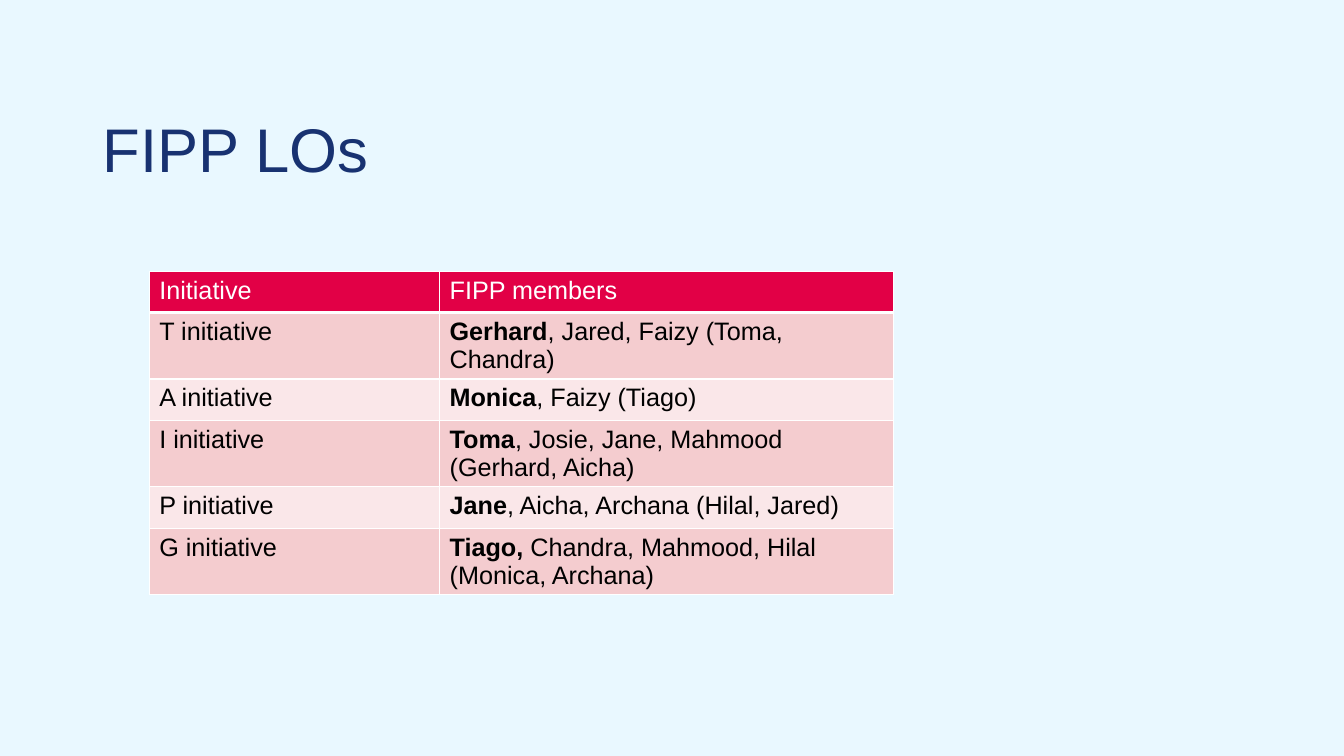
from lxml.etree import SubElement
from pptx import Presentation
from pptx.dml.color import RGBColor
from pptx.enum.text import MSO_ANCHOR, PP_ALIGN
from pptx.oxml.ns import qn
from pptx.util import Inches, Pt

FONT = "Arial"
NAVY, RED, WHITE, BLACK = "183271", "E20046", "FFFFFF", "000000"
BANDS = ["F4CCCF", "FAE7E9"]
COLUMN_WIDTHS = [2.88, 4.5]
ROW_HEIGHT = 0.41
INITIATIVES = [
    ("T initiative", "Gerhard", ", Jared, Faizy (Toma, Chandra)"),
    ("A initiative", "Monica", ", Faizy (Tiago)"),
    ("I initiative", "Toma", ", Josie, Jane, Mahmood (Gerhard, Aicha)"),
    ("P initiative", "Jane", ", Aicha, Archana (Hilal, Jared)"),
    ("G initiative", "Tiago, ", "Chandra, Mahmood, Hilal (Monica, Archana)"),
]


def color(value):
    return RGBColor.from_string(value)


def add_span(para, text, size, ink, bold=False):
    span = para.add_run()
    span.text = text
    span.font.name = FONT
    span.font.size = Pt(size)
    span.font.bold = bold
    span.font.color.rgb = color(ink)


def add_border(cell, side, width):
    line = SubElement(cell._tc.get_or_add_tcPr(), qn(f"a:ln{side}"), w=str(Pt(width)))
    SubElement(SubElement(line, qn("a:solidFill")), qn("a:srgbClr"), val=WHITE)


def fill_cell(cell, spans, background, ink, bottom=1):
    for side in "LRT":
        add_border(cell, side, 1)
    add_border(cell, "B", bottom)
    cell.fill.solid()
    cell.fill.fore_color.rgb = color(background)
    for text, bold in spans:
        add_span(cell.text_frame.paragraphs[0], text, 18, ink, bold)


def set_title(page, text):
    title = page.shapes.title
    title.left, title.top = Inches(0.92), Inches(1.13)
    title.width, title.height = Inches(11.5), Inches(1.45)
    title.text_frame.vertical_anchor = MSO_ANCHOR.TOP
    para = title.text_frame.paragraphs[0]
    para.alignment = PP_ALIGN.LEFT
    para.line_spacing = 0.9
    add_span(para, text, 44, NAVY)


def add_initiative_table(page):
    row_count = len(INITIATIVES) + 1
    table = page.shapes.add_table(
        row_count, len(COLUMN_WIDTHS), Inches(1.48), Inches(2.69),
        Inches(sum(COLUMN_WIDTHS)), Inches(ROW_HEIGHT * row_count)).table
    for column, width in zip(table.columns, COLUMN_WIDTHS):
        column.width = Inches(width)
    for row in table.rows:
        row.height = Inches(ROW_HEIGHT)
    for index, heading in enumerate(["Initiative", "FIPP members"]):
        fill_cell(table.cell(0, index), [(heading, False)], RED, WHITE, bottom=3)
    for index, (initiative, lead, others) in enumerate(INITIATIVES):
        band = BANDS[index % 2]
        fill_cell(table.cell(index + 1, 0), [(initiative, False)], band, BLACK)
        fill_cell(table.cell(index + 1, 1), [(lead, True), (others, False)], band, BLACK)


def main():
    deck = Presentation()
    deck.slide_width, deck.slide_height = Inches(13.33), Inches(7.5)
    page = deck.slides.add_slide(deck.slide_layouts.get_by_name("Title Only"))
    page.background.fill.solid()
    page.background.fill.fore_color.rgb = color("E9F8FF")
    set_title(page, "FIPP LOs")
    add_initiative_table(page)
    deck.save("out.pptx")


if __name__ == "__main__":
    main()
